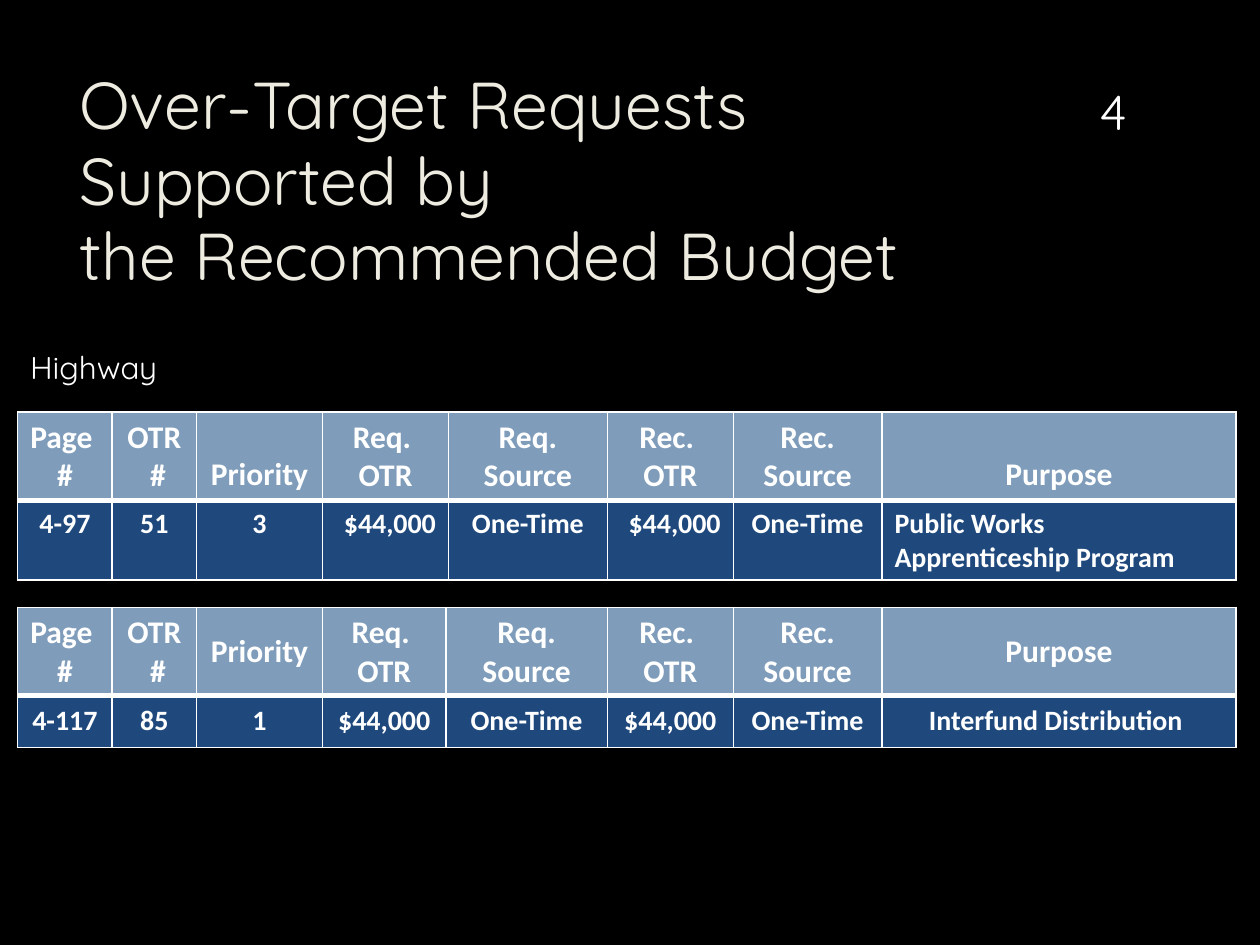
from dataclasses import dataclass
from lxml.etree import SubElement
from pptx import Presentation
from pptx.dml.color import RGBColor
from pptx.enum.text import MSO_ANCHOR, PP_ALIGN
from pptx.oxml.ns import qn
from pptx.util import Inches, Pt


@dataclass(frozen=True)
class Theme:
    background: str = "000000"
    title: str = "EEECE1"
    text: str = "FFFFFF"
    header: str = "7F9DBB"
    body: str = "1F497D"
    display_font: str = "Quicksand"
    table_font: str = "Calibri"
    title_size: float = 37.8
    number_size: float = 28
    label_size: float = 18
    body_size: float = 16
    thin: float = 1
    thick: float = 3


@dataclass(frozen=True)
class Box:
    left: float
    top: float
    width: float
    height: float = 0

    def lengths(self):
        return (across(self.left), down(self.top), across(self.width), down(self.height))


THEME = Theme()
WIDTH, HEIGHT = 10, 7.5
LEFT, CENTER, RIGHT = PP_ALIGN.LEFT, PP_ALIGN.CENTER, PP_ALIGN.RIGHT
TOP, MIDDLE, BOTTOM = MSO_ANCHOR.TOP, MSO_ANCHOR.MIDDLE, MSO_ANCHOR.BOTTOM
HEADINGS = ["Page \n#", "OTR\n #", "Priority", "Req. \nOTR", "Req. Source",
            "Rec. \nOTR", "Rec. Source", "Purpose"]


def across(percent):
    return Inches(WIDTH * percent / 100)


def down(percent):
    return Inches(HEIGHT * percent / 100)


def apply_format(target, values):
    for name, value in values.items():
        setattr(target, name, value)


def write(frame, text, font, size, color, align=LEFT, bold=False, spacing=None):
    for index, line in enumerate(text.split("\n")):
        para = frame.add_paragraph() if index else frame.paragraphs[0]
        para.text = line
        apply_format(para, {"alignment": align, "line_spacing": spacing})
        for span in para.runs:
            apply_format(span.font, {"name": font, "size": Pt(size), "bold": bold})
            span.font.color.rgb = RGBColor.from_string(color)


def add_text(page, box, text, size, color, align=LEFT, anchor=TOP, spacing=None):
    frame = page.shapes.add_textbox(*box.lengths()).text_frame
    apply_format(frame, {"word_wrap": True, "vertical_anchor": anchor})
    write(frame, text, THEME.display_font, size, color, align, spacing=spacing)


def set_borders(cell, widths):
    properties = cell._tc.get_or_add_tcPr()
    for side, width in widths.items():
        line = SubElement(properties, qn(f"a:ln{side}"), w=str(Pt(width)))
        fill = SubElement(line, qn("a:solidFill"))
        SubElement(fill, qn("a:srgbClr"), val=THEME.text)


def fill_row(cells, texts, aligns, anchor, size, color, widths):
    for cell, text, align in zip(cells, texts, aligns):
        set_borders(cell, widths)
        cell.fill.solid()
        cell.fill.fore_color.rgb = RGBColor.from_string(color)
        cell.vertical_anchor = anchor
        write(cell.text_frame, text, THEME.table_font, size, THEME.text, align, bold=True)


def add_requests(page, box, columns, rows, values, aligns, anchors):
    table = page.shapes.add_table(2, len(columns), *box.lengths()).table
    for column, share in zip(table.columns, columns):
        column.width = across(share)
    for row, share in zip(table.rows, rows):
        row.height = down(share)
    edges = dict.fromkeys("LRTB", THEME.thin)
    fill_row(table.rows[0].cells, HEADINGS, [CENTER] * len(HEADINGS), anchors[0],
             THEME.label_size, THEME.header, edges | {"B": THEME.thick})
    fill_row(table.rows[1].cells, values, aligns, anchors[1],
             THEME.body_size, THEME.body, edges | {"T": THEME.thick})


def add_heading(page, title_box, number_box):
    add_text(page, title_box, "Over-Target Requests Supported by \vthe Recommended Budget",
             THEME.title_size, THEME.title, spacing=0.95)
    add_text(page, number_box, "4", THEME.number_size, THEME.text, CENTER, BOTTOM)


def main():
    deck = Presentation()
    apply_format(deck, {"slide_width": Inches(WIDTH), "slide_height": Inches(HEIGHT)})
    page = deck.slides.add_slide(deck.slide_layouts[6])
    page.background.fill.solid()
    page.background.fill.fore_color.rgb = RGBColor.from_string(THEME.background)

    add_heading(page, Box(5.3, 6.67, 77.2, 20.4), Box(84.9, 4.27, 6.9, 11.2))
    add_text(page, Box(1.4, 36.13, 12.7, 5.33), "Highway", THEME.label_size, THEME.text)
    add_requests(
        page, Box(1.4, 43.6, 96.7, 17.73),
        [7.5, 6.7, 10, 10, 12.6, 10, 11.8, 28.1], [9.33, 8.4],
        ["4-97", "51", "3", "$44,000", "One-Time", "$44,000", "One-Time",
         "Public Works Apprenticeship Program"],
        [CENTER, CENTER, CENTER, RIGHT, CENTER, RIGHT, CENTER, LEFT], [BOTTOM, TOP])
    add_requests(
        page, Box(1.4, 64.27, 96.7, 14.8),
        [7.5, 6.7, 10, 9.8, 12.8, 10, 11.8, 28.1], [9.33, 5.47],
        ["4-117", "85", "1", "$44,000", "One-Time", "$44,000", "One-Time",
         "Interfund Distribution "],
        [CENTER] * len(HEADINGS), [MIDDLE, MIDDLE])
    deck.save("out.pptx")


if __name__ == "__main__":
    main()
